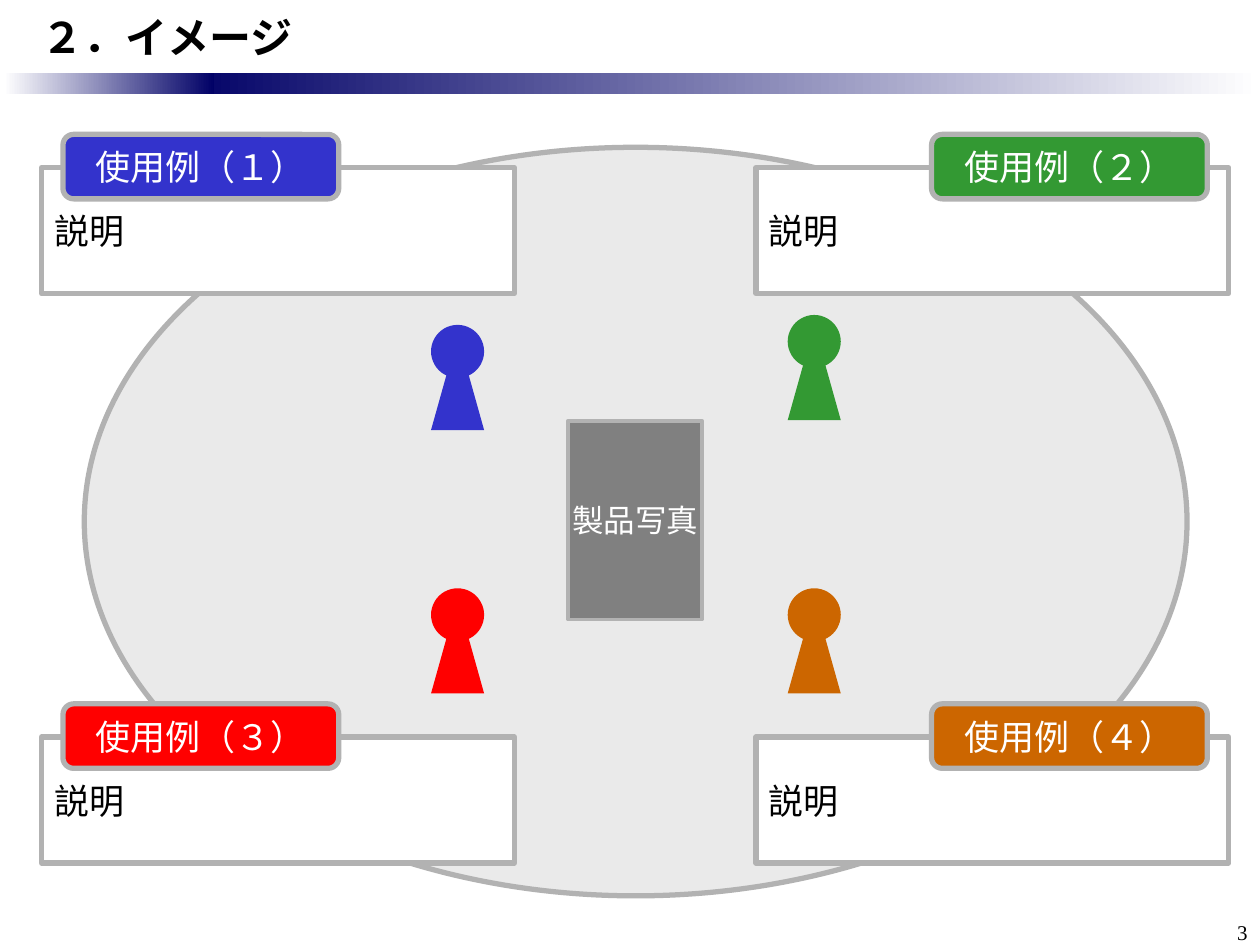
from dataclasses import dataclass
from typing import Optional

from lxml.etree import SubElement
from pptx import Presentation
from pptx.dml.color import RGBColor as Rgb
from pptx.enum.shapes import MSO_SHAPE as Kind
from pptx.enum.text import MSO_ANCHOR as Anchor, MSO_AUTO_SIZE as Fit, PP_ALIGN as Align
from pptx.oxml.ns import qn
from pptx.util import Cm, Pt


@dataclass(frozen=True)
class Theme:
    """Colours, fonts and sizes of the slide."""
    navy: str = "000066"
    white: str = "FFFFFF"
    black: str = "000000"
    pale: str = "EAEAEA"
    edge: str = "B2B2B2"
    gray: str = "808080"
    sans: str = "Noto Sans CJK JP"
    serif: str = "Times New Roman"
    head: int = 24
    body: int = 20
    photo: int = 18
    page: int = 12


@dataclass(frozen=True)
class Box:
    """A place on the slide in centimetres."""
    x: float
    y: float
    w: float
    h: float

    def cm(self) -> tuple:
        """Return the place as lengths."""
        return Cm(self.x), Cm(self.y), Cm(self.w), Cm(self.h)


@dataclass(frozen=True)
class Case:
    """One use case with its card, tab and pawn."""
    mark: str
    color: str
    col: int
    row: int
    top: float


THEME = Theme()
CARD_X, CARD_Y = (0.84, 15.24), (3.38, 14.86)
CARD_W, CARD_H = 9.53, 2.54
TAB_W, TAB_H, TAB_IN, TAB_UP = 5.56, 1.3, 0.43, 0.67
PAWN_X, PAWN_W, PAWN_H = (8.69, 15.88), 1.07, 1.91
CASES = (
    Case("１", "3333CC", 0, 0, 6.55),
    Case("２", "339933", 1, 0, 6.35),
    Case("３", "FF0000", 0, 1, 11.86),
    Case("４", "CC6600", 1, 1, 11.86),
)


def add_shape(pool, kind: Kind, box: Box, fill: Optional[str], line: float = 0):
    """Add a flat shape, with an edge if a line width is given."""
    shape = pool.add_shape(kind, *box.cm())
    shape.shadow.inherit = False
    if fill:
        shape.fill.solid()
        shape.fill.fore_color.rgb = Rgb.from_string(fill)
    if line:
        shape.line.color.rgb = Rgb.from_string(THEME.edge)
        shape.line.width = Pt(line)
    else:
        shape.line.fill.background()
    return shape


def set_text(shape, text: str, size: int, color: str, face: str,
             align: Align = Align.LEFT, anchor: Anchor = Anchor.MIDDLE,
             wrap: bool = True, bold: bool = False) -> None:
    """Fill a shape with one formatted line."""
    frame = shape.text_frame
    frame.text = text
    frame.word_wrap = wrap
    frame.auto_size = Fit.NONE
    frame.vertical_anchor = anchor
    para = frame.paragraphs[0]
    para.alignment = align
    run = para.runs[0]
    run.font.size = Pt(size)
    run.font.bold = bold
    run.font.color.rgb = Rgb.from_string(color)
    run.font.name = face
    SubElement(run.font._element, qn("a:ea"), typeface=THEME.sans)


def add_bar(pool, box: Box, start: str, end: str) -> None:
    """Add a bar that fades from left to right."""
    bar = add_shape(pool, Kind.RECTANGLE, box, None)
    bar.fill.gradient()
    bar.fill.gradient_angle = 0
    for stop, color in zip(bar.fill.gradient_stops, (start, end)):
        stop.color.rgb = Rgb.from_string(color)


def add_pawn(pool, case: Case) -> None:
    """Add a grouped figure made of a triangle and a round head."""
    group = pool.add_group_shape().shapes
    x = PAWN_X[case.col]
    add_shape(group, Kind.ISOSCELES_TRIANGLE,
              Box(x, case.top + 0.21, PAWN_W, PAWN_H), case.color)
    add_shape(group, Kind.OVAL, Box(x, case.top, PAWN_W, PAWN_W), case.color)


def add_card(pool, case: Case) -> None:
    """Add a card with its coloured tab at the outer corner."""
    x, y = CARD_X[case.col], CARD_Y[case.row]
    card = add_shape(pool, Kind.RECTANGLE, Box(x, y, CARD_W, CARD_H), THEME.white, 3)
    set_text(card, "説明", THEME.body, THEME.black, THEME.sans)
    shift = CARD_W - TAB_W - TAB_IN if case.col else TAB_IN
    tab = add_shape(pool, Kind.ROUNDED_RECTANGLE,
                    Box(x + shift, y - TAB_UP, TAB_W, TAB_H), case.color, 3)
    set_text(tab, f"使用例（{case.mark}）", THEME.body, THEME.white, THEME.serif, Align.CENTER)


def add_title(slide) -> None:
    """Place and format the title."""
    title = slide.shapes.title
    title.left, title.top, title.width, title.height = Box(0, 0, 25.4, 1.47).cm()
    set_text(title, "２．イメージ", THEME.head, THEME.black, THEME.sans, bold=True)
    title.text_frame.margin_left = Cm(0.84)


def main() -> None:
    """Build and save the slide."""
    deck = Presentation()
    deck.slide_width, deck.slide_height = Cm(25.4), Cm(19.05)
    slide = deck.slides.add_slide(deck.slide_layouts[5])
    pool = slide.shapes
    add_title(slide)
    add_bar(pool, Box(3.61, 1.47, 21.79, 0.43), THEME.navy, THEME.white)
    add_bar(pool, Box(0.08, 1.47, 4.24, 0.43), THEME.white, THEME.navy)
    page = pool.add_textbox(*Box(23.93, 18.41, 1.47, 0.64).cm())
    set_text(page, "3", THEME.page, THEME.black, THEME.serif, Align.RIGHT, Anchor.TOP)
    add_shape(pool, Kind.OVAL, Box(1.7, 2.97, 22.23, 15.09), THEME.pale, 3)
    photo = add_shape(pool, Kind.RECTANGLE, Box(11.46, 8.48, 2.69, 4.01), THEME.gray, 2.25)
    set_text(photo, "製品写真", THEME.photo, THEME.white, THEME.serif, Align.CENTER, wrap=False)
    for case in CASES:
        add_pawn(pool, case)
        add_card(pool, case)
    deck.save("out.pptx")


if __name__ == "__main__":
    main()
